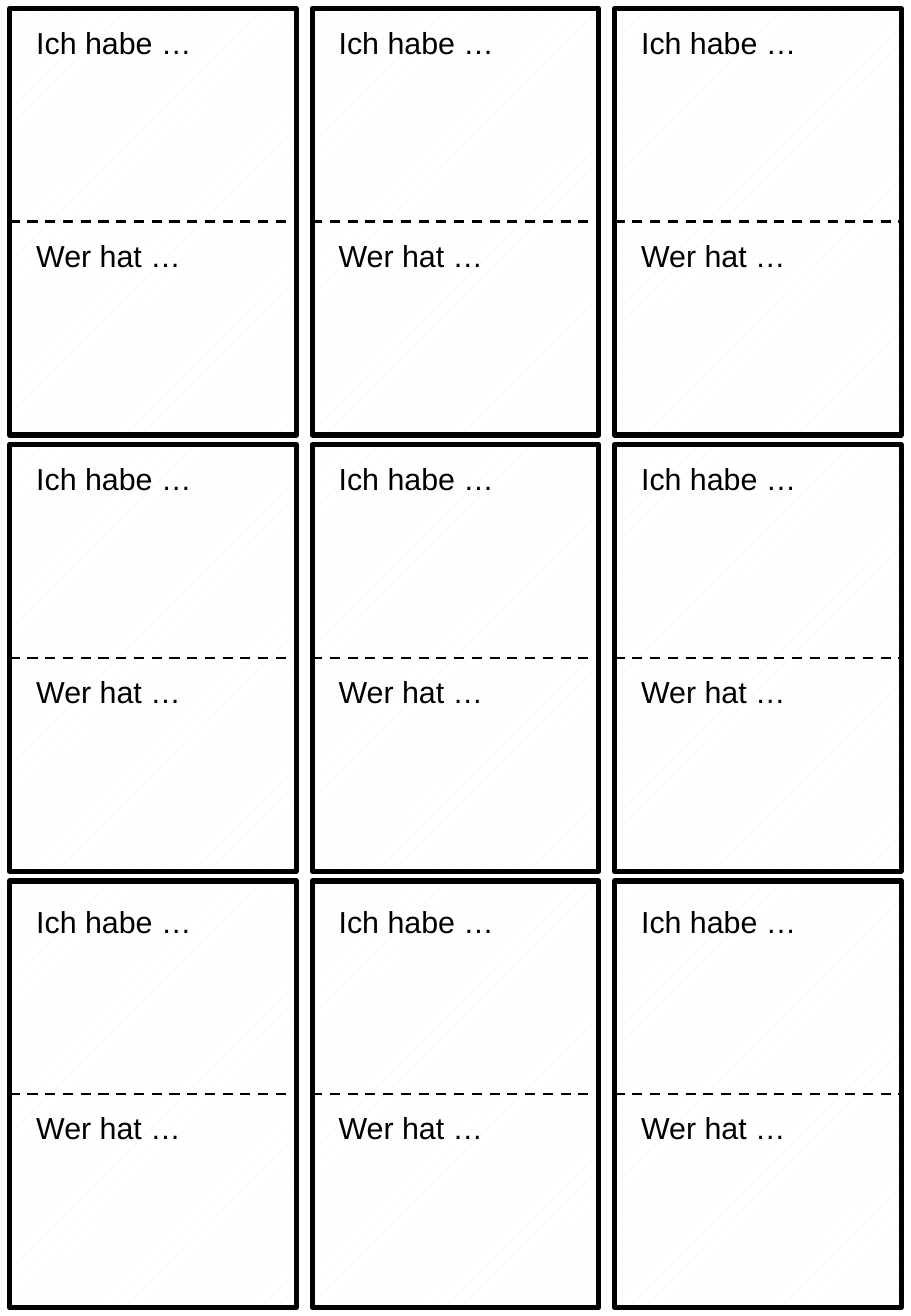
from itertools import product

from pptx import Presentation
from pptx import util as u
from pptx.dml.color import RGBColor
from pptx.enum import dml, shapes, text
from pptx.oxml.ns import qn
from lxml import etree

PX = 9144
CARD_W, CARD_H = 236, 351
LEFT, TOP = 8, 7
STEP_X, STEP_Y = 249, 359
LABEL_INDENT = 12
HAVE_OFFSETS = (8, 8, 13)
ASK_OFFSET = 183


def px(n):
    """Turn px into EMU."""
    return u.Emu(n * PX)


def color(value):
    """Turn a hex string into a colour."""
    return RGBColor.from_string(value)


class CardSheet:
    """Holds the style and the current slide."""

    font = "Arial"
    size = 18
    ink = "000000"
    tint = "EBFEC6"
    paper = "FFFFFF"

    def __init__(self, slide):
        """Keep the slide to draw on."""
        self.s = slide

    def card(self, x, y):
        """Draw one framed card with a light pattern."""
        sp = self.s.shapes.add_shape(
            shapes.MSO_SHAPE.RECTANGLE, px(x), px(y), px(CARD_W), px(CARD_H))
        sp.shadow.inherit = False
        sp.fill.patterned()
        sp.fill.pattern = dml.MSO_PATTERN.PERCENT_5
        sp.fill.fore_color.rgb = color(self.tint)
        sp.fill.back_color.rgb = color(self.paper)
        sp.line.color.rgb = color(self.ink)
        sp.line.width = u.Pt(3)
        return sp

    def divider(self, card):
        """Draw a dashed line across the middle of a card."""
        y = card.top + card.height // 2
        cn = self.s.shapes.add_connector(
            shapes.MSO_CONNECTOR.STRAIGHT, card.left, y, card.left + card.width, y)
        cn.begin_connect(card, 1)
        cn.end_connect(card, 3)
        cn.line.color.rgb = color(self.ink)
        cn.line.width = u.Pt(1.5)
        cn.line.dash_style = dml.MSO_LINE.DASH
        etree.SubElement(cn._element.spPr, qn("a:effectLst"))

    def label(self, x, y, words):
        """Write one line of text."""
        sp = self.s.shapes.add_textbox(px(x), px(y), px(154), px(42))
        tf = sp.text_frame
        tf.word_wrap = True
        tf.auto_size = text.MSO_AUTO_SIZE.SHAPE_TO_FIT_TEXT
        tf.text = words
        r = tf.paragraphs[0].runs[0]
        r.font.name = self.font
        r.font.size = u.Pt(self.size)
        r.font.color.rgb = color(self.ink)


def main():
    """Build the sheet of nine cards."""
    prs = Presentation()
    prs.slide_width, prs.slide_height = px(750), px(1083)
    sheet = CardSheet(prs.slides.add_slide(prs.slide_layouts[6]))
    for row, col in product(range(3), repeat=2):
        x, y = LEFT + col * STEP_X, TOP + row * STEP_Y
        card = sheet.card(x, y)
        sheet.divider(card)
        sheet.label(x + LABEL_INDENT, y + HAVE_OFFSETS[row], "Ich habe …")
        sheet.label(x + LABEL_INDENT, y + ASK_OFFSET, "Wer hat …")
    prs.save("out.pptx")


if __name__ == "__main__":
    main()
